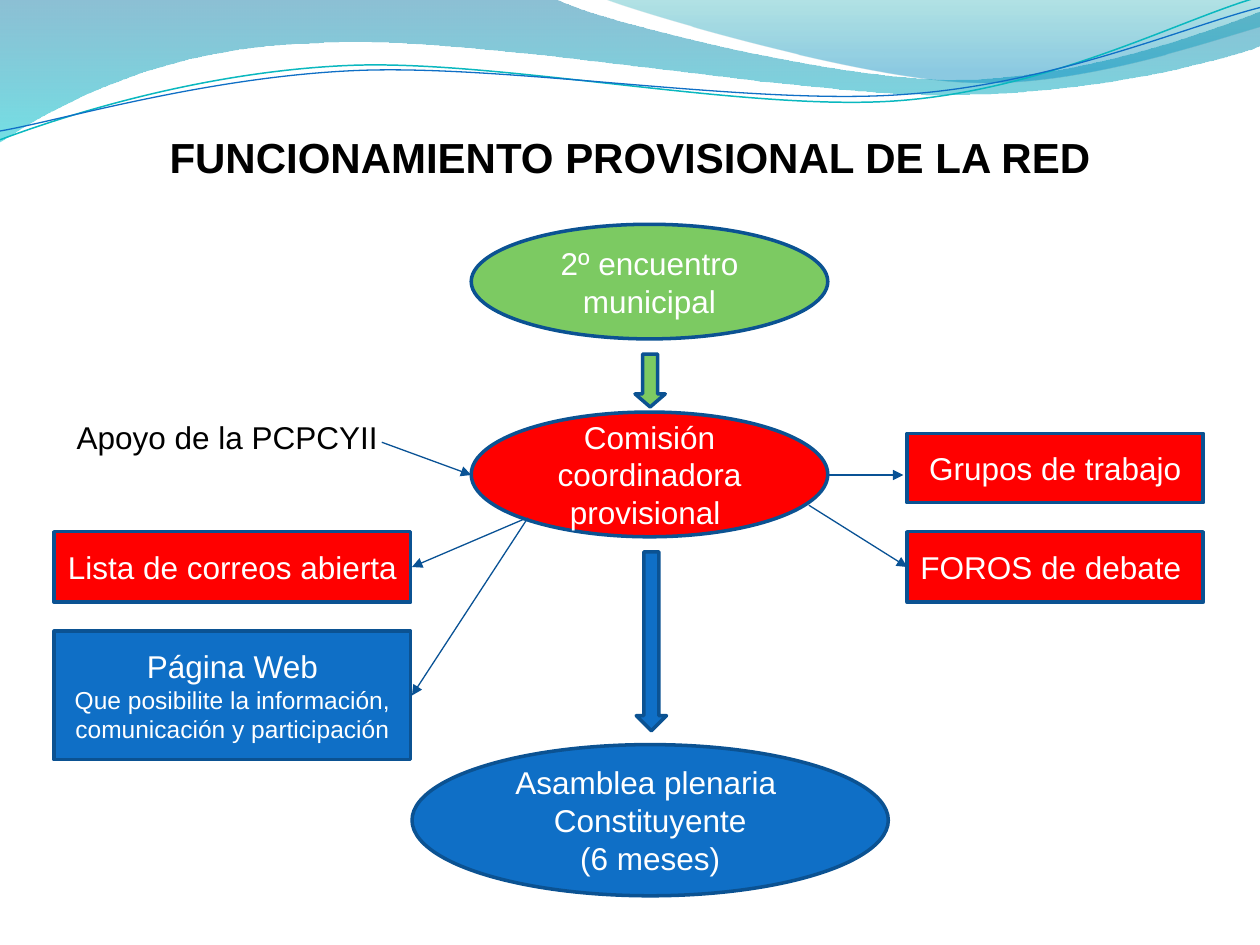
from lxml import etree
from pptx import Presentation
from pptx.dml.color import RGBColor
from pptx.enum.shapes import MSO_CONNECTOR, MSO_SHAPE
from pptx.enum.text import MSO_ANCHOR, PP_ALIGN
from pptx.oxml.ns import qn
from pptx.util import Inches, Pt

ELLIPSE, RECTANGLE = MSO_SHAPE.OVAL, MSO_SHAPE.RECTANGLE
DOWN_ARROW, STRAIGHT = MSO_SHAPE.DOWN_ARROW, MSO_CONNECTOR.STRAIGHT
CENTER, LEFT = PP_ALIGN.CENTER, PP_ALIGN.LEFT
TOP, MIDDLE = MSO_ANCHOR.TOP, MSO_ANCHOR.MIDDLE

WHITE = RGBColor(0xFF, 0xFF, 0xFF)
BLACK = RGBColor(0x00, 0x00, 0x00)
GREEN = RGBColor(0x7C, 0xCA, 0x62)
RED = RGBColor(0xFF, 0x00, 0x00)
BLUE = RGBColor(0x0F, 0x6F, 0xC6)
OUTLINE = RGBColor(0x0B, 0x52, 0x92)
LINK = RGBColor(0x09, 0x52, 0x95)
TEAL = RGBColor(0x0A, 0xB8, 0xBF)
WAVE_TOP = RGBColor(0x00, 0x74, 0xA1)
WAVE_BOTTOM = RGBColor(0x00, 0xC6, 0xCF)
CREST_TOP = RGBColor(0x00, 0xA1, 0xA9)
CREST_BOTTOM = RGBColor(0x00, 0x8B, 0xBF)

FONT = "Arial"

WAVE = [[(0, 0)], [(4.4, -0.01)],
        [(4.76, 0.17), (6.64, 0.63), (7.58, 0.63)],
        [(8.53, 0.63), (9.58, 0.26), (10, 0.09)], [(10.01, 0.36)],
        [(9.83, 0.44), (8.7, 0.76), (7.46, 0.75)],
        [(6.22, 0.75), (3.82, 0.28), (2.57, 0.34)],
        [(1.29, 0.36), (0.46, 0.83), (-0.01, 1.13)]]
CREST = [[(4.79, -0.01)], [(5.09, 0.11), (6.82, 0.62), (7.69, 0.65)],
         [(8.56, 0.69), (9.61, 0.32), (10, 0.21)], [(10, 0)]]
TEAL_RIPPLE = [[(0, 1.11)], [(0.48, 0.93), (1.58, 0.57), (2.77, 0.52)],
               [(3.95, 0.47), (5.93, 0.89), (7.13, 0.8)],
               [(8.33, 0.71), (9.38, 0.15), (9.98, -0.02)]]
BLUE_RIPPLE = [[(0, 1.04)], [(0.47, 0.96), (1.64, 0.61), (2.83, 0.56)],
               [(4.03, 0.51), (5.97, 0.84), (7.17, 0.75)],
               [(8.36, 0.67), (9.41, 0.21), (10, 0.06)]]


def add_outline(slide, box, outline, closed):
    """Draw an outline whose three-point segments are cubic curves."""
    left, top = box[:2]
    points = [(left + Inches(x), top + Inches(y)) for segment in outline for x, y in segment]
    builder = slide.shapes.build_freeform(*points[0])
    builder.add_line_segments(points[1:], close=closed)
    curve = builder.convert_to_shape()
    curve.shadow.inherit = False
    line_nodes = iter(list(curve._element.spPr.iter(qn("a:lnTo"))))
    for segment in outline[1:]:
        nodes = [next(line_nodes) for _ in segment]
        if len(nodes) == 3:
            cubic = etree.Element(qn("a:cubicBezTo"))
            nodes[0].addprevious(cubic)
            for node in nodes:
                cubic.append(node[0])
                node.getparent().remove(node)
    return curve


def add_wave(slide, box, outline, stops):
    """Draw a closed wave with a translucent vertical gradient."""
    wave = add_outline(slide, box, outline, True)
    wave.line.fill.background()
    wave.fill.gradient()
    wave.fill.gradient_angle = 270
    for stop, (position, color, _) in zip(wave.fill.gradient_stops, stops):
        stop.position = position
        stop.color.rgb = color
    for color_node, (_, _, opacity) in zip(wave._element.spPr.iter(qn("a:srgbClr")), stops):
        etree.SubElement(color_node, qn("a:alpha"), val=str(opacity * 1000))


def add_ripple(slide, box, outline, color, width):
    """Draw an open curved line."""
    ripple = add_outline(slide, box, outline, False)
    ripple.fill.background()
    ripple.line.color.rgb = color
    ripple.line.width = Pt(width)


def add_banner(slide, box):
    """Draw the waves along the top of the slide."""
    add_wave(slide, box, WAVE, [(0, WAVE_TOP, 45), (1, WAVE_BOTTOM, 55)])
    add_wave(slide, box, CREST, [(0, CREST_TOP, 30), (0.8, CREST_BOTTOM, 45)])
    add_ripple(slide, box, TEAL_RIPPLE, TEAL, 0.85)
    add_ripple(slide, box, BLUE_RIPPLE, BLUE, 0.75)


def write_text(frame, text, color=WHITE, sizes=(18,), bold=False, align=CENTER, anchor=MIDDLE):
    """Write one paragraph per line; the last size serves the remaining lines."""
    frame.word_wrap = True
    frame.vertical_anchor = anchor
    for index, line in enumerate(text.split("\n")):
        paragraph = frame.paragraphs[0] if index == 0 else frame.add_paragraph()
        paragraph.alignment = align
        run = paragraph.add_run()
        run.text = line
        run.font.name = FONT
        run.font.size = Pt(sizes[min(index, len(sizes) - 1)])
        run.font.bold = bold
        run.font.color.rgb = color


def add_title(slide, box):
    """Place the slide title in front of the banner."""
    title = slide.shapes.title
    title.left, title.top, title.width, title.height = box
    write_text(title.text_frame, "FUNCIONAMIENTO PROVISIONAL DE LA RED",
               color=BLACK, sizes=(24,), bold=True, anchor=TOP)
    slide.shapes._spTree.append(title._element)


def add_node(slide, box, kind, fill, text="", sizes=(18,)):
    """Draw an outlined preset shape with optional text."""
    node = slide.shapes.add_shape(kind, *box)
    node.shadow.inherit = False
    node.fill.solid()
    node.fill.fore_color.rgb = fill
    node.line.color.rgb = OUTLINE
    node.line.width = Pt(2)
    if text:
        write_text(node.text_frame, text, sizes=sizes)
    return node


def add_link(slide, start, end):
    """Draw a thin arrow between two points."""
    link = slide.shapes.add_connector(STRAIGHT, *start, *end)
    link.line.color.rgb = LINK
    link.line.width = Pt(0.75)
    etree.SubElement(link.line._get_or_add_ln(), qn("a:tailEnd"), type="triangle")
    etree.SubElement(link._element.spPr, qn("a:effectLst"))


def add_flow(slide, box):
    """Draw the diagram, with parts measured in inches from the box corner."""
    left, top = box[:2]

    def area(x, y, width=0, height=0):
        return left + Inches(x), top + Inches(y), Inches(width), Inches(height)

    nodes = [
        ((3.31, 0, 2.83, 0.91), ELLIPSE, GREEN, "2º encuentro municipal"),
        ((3.31, 1.49, 2.83, 0.99), ELLIPSE, RED, "Comisión coordinadora provisional "),
        ((0, 2.44, 2.83, 0.56), RECTANGLE, RED, "Lista de correos abierta"),
        ((0, 3.23, 2.83, 1.02), RECTANGLE, BLUE,
         "Página Web\nQue posibilite la información, comunicación y participación", (18, 14)),
        ((6.77, 1.66, 2.35, 0.55), RECTANGLE, RED, "Grupos de trabajo"),
        ((2.84, 4.13, 3.78, 1.2), ELLIPSE, BLUE,
         "Asamblea plenaria \nConstituyente\n(6 meses)"),
        ((4.62, 2.6, 0.24, 1.42), DOWN_ARROW, BLUE),
        ((6.77, 2.44, 2.35, 0.56), RECTANGLE, RED, "FOROS de debate "),
    ]
    for place, *details in nodes:
        add_node(slide, area(*place), *details)
    short_arrow = add_node(slide, area(4.61, 1.03, 0.24, 0.42), DOWN_ARROW, GREEN)
    short_arrow.adjustments[1] = 0.43

    support = slide.shapes.add_textbox(*area(0.08, 1.49, 2.76, 0.4))
    write_text(support.text_frame, "Apoyo de la PCPCYII", color=BLACK, align=LEFT, anchor=TOP)

    links = [((3.73, 2.34), (2.84, 2.72)), ((3.76, 2.33), (2.84, 3.74)),
             ((2.6, 1.73), (3.31, 1.99)), ((6.14, 1.99), (6.74, 1.99)),
             ((5.99, 2.23), (6.77, 2.72))]
    for start, end in links:
        add_link(slide, area(*start)[:2], area(*end)[:2])


def main():
    """Build and save the slide."""
    deck = Presentation()
    deck.slide_width, deck.slide_height = Inches(10), Inches(7.5)
    slide = deck.slides.add_slide(deck.slide_layouts[5])
    add_banner(slide, (0, 0, Inches(10), Inches(1.13)))
    add_title(slide, (Inches(0.75), Inches(0.99), Inches(8.5), Inches(0.5)))
    add_flow(slide, (Inches(0.43), Inches(1.78), Inches(9.12), Inches(5.33)))
    deck.save("out.pptx")


if __name__ == "__main__":
    main()
